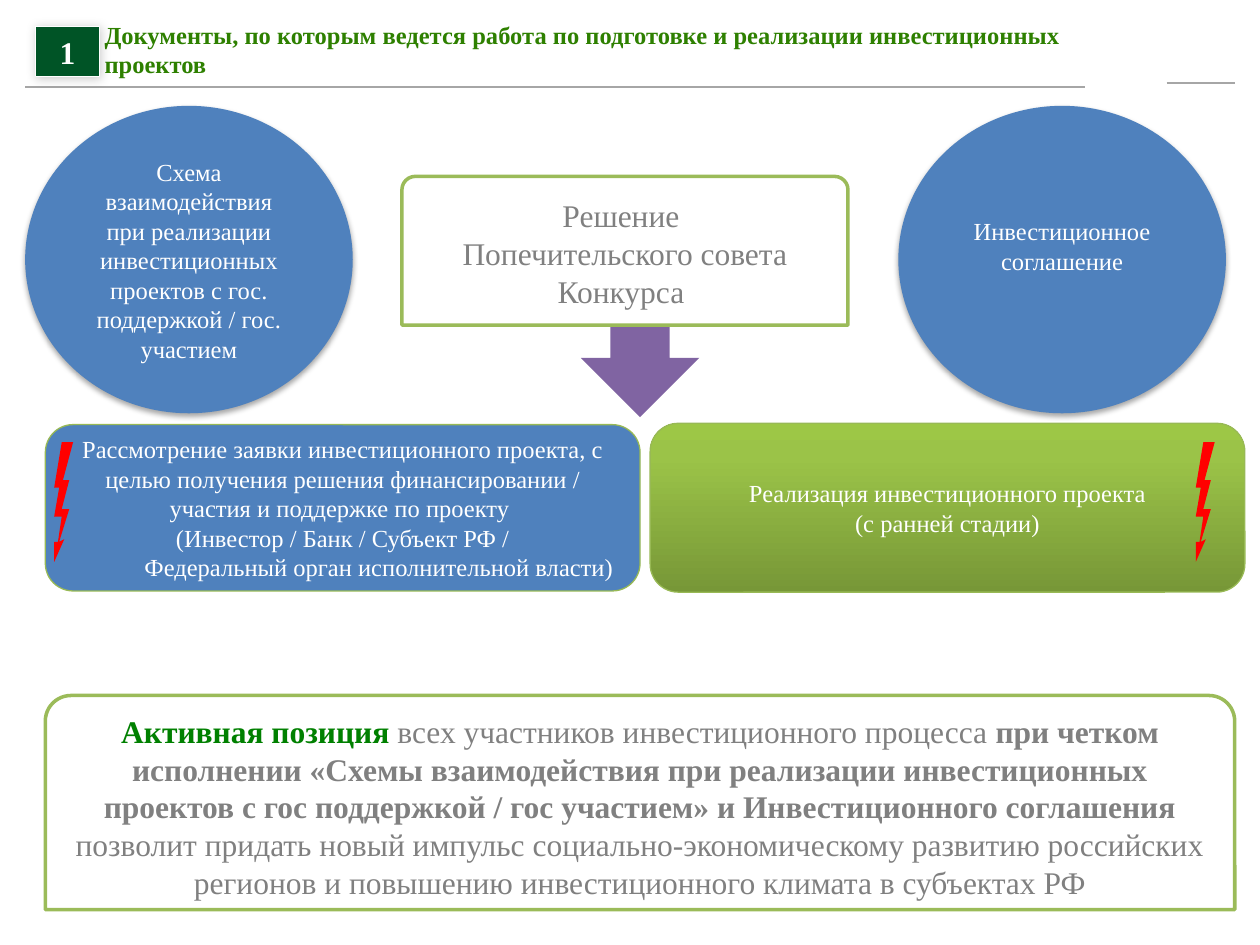
from dataclasses import dataclass
from copy import deepcopy

from lxml import etree
from pptx import Presentation
from pptx.dml.color import RGBColor
from pptx.enum.shapes import MSO_CONNECTOR, MSO_SHAPE
from pptx.enum.text import MSO_ANCHOR, PP_ALIGN
from pptx.oxml.ns import qn
from pptx.util import Inches, Pt

RECTANGLE, OVAL = MSO_SHAPE.RECTANGLE, MSO_SHAPE.OVAL
ROUNDED, TOP_ROUNDED = MSO_SHAPE.ROUNDED_RECTANGLE, MSO_SHAPE.ROUND_2_SAME_RECTANGLE
DOWN_ARROW = MSO_SHAPE.DOWN_ARROW
TOP, MIDDLE = MSO_ANCHOR.TOP, MSO_ANCHOR.MIDDLE
LEFT, CENTER, RIGHT = PP_ALIGN.LEFT, PP_ALIGN.CENTER, PP_ALIGN.RIGHT
STRAIGHT = MSO_CONNECTOR.STRAIGHT


@dataclass(frozen=True)
class Theme:
    font: str = "Times New Roman"
    small: int = 14
    large: int = 18
    white: str = "FFFFFF"
    grey: str = "808080"
    rule: str = "A6A6A6"
    title: str = "2E8000"
    accent: str = "008000"
    badge: str = "005426"
    blue: str = "4F81BD"
    purple: str = "8064A2"
    red: str = "FF0000"
    frame: str = "9BBB59"
    edge: str = "98B955"
    gradient: tuple = ((0, "779737"), (0.8, "9BC348"), (1, "9DC746"))


def color(value):
    return RGBColor.from_string(value)


class SlideBuilder:
    def __init__(self, slide, theme):
        self.slide = slide
        self.theme = theme

    def rule(self, left, right, y):
        line = self.slide.shapes.add_connector(
            STRAIGHT, Inches(left), Inches(y), Inches(right), Inches(y))
        line.line.color.rgb = color(self.theme.rule)
        line.line.width = Pt(1)
        etree.SubElement(line._element.spPr, qn("a:effectLst"))

    def shape(self, kind, place, fill=None, line=None, width=0.75, adjustment=None):
        box = self.slide.shapes.add_shape(kind, *map(Inches, place))
        if adjustment is not None:
            box.adjustments[0] = adjustment
        self.paint(box, fill, line, width)
        return box

    def paint(self, box, fill, line=None, width=0.75):
        box.shadow.inherit = False
        if fill:
            box.fill.solid()
            box.fill.fore_color.rgb = color(fill)
        if line:
            box.line.color.rgb = color(line)
            box.line.width = Pt(width)
        else:
            box.line.fill.background()

    def gradient(self, box):
        """Fill the box with the theme's stops, running from bottom to top."""
        box.fill.gradient()
        box.fill.gradient_angle = 90
        stop_list = box._element.spPr.find(".//" + qn("a:gsLst"))
        stop_list.append(deepcopy(stop_list[0]))
        for stop, (position, value) in zip(box.fill.gradient_stops, self.theme.gradient):
            stop.position = position
            stop.color.rgb = color(value)

    def shadow(self, box, opacity, blur, distance, angle):
        effects = box._element.spPr.find(qn("a:effectLst"))
        outer = etree.SubElement(
            effects, qn("a:outerShdw"), blurRad=str(Pt(blur)), dist=str(Pt(distance)),
            dir=str(angle * 60000), rotWithShape="0")
        shade = etree.SubElement(outer, qn("a:srgbClr"), val="000000")
        etree.SubElement(shade, qn("a:alpha"), val=str(opacity * 1000))

    def text(self, box, paragraphs, size, anchor=MIDDLE):
        """Each paragraph is (alignment, [(text, colour, bold), ...])."""
        frame = box.text_frame
        frame.word_wrap = True
        frame.vertical_anchor = anchor
        for index, (alignment, runs) in enumerate(paragraphs):
            para = frame.add_paragraph() if index else frame.paragraphs[0]
            para.alignment = alignment
            for content, value, bold in runs:
                span = para.add_run()
                span.text = content
                span.font.name = self.theme.font
                span.font.size = Pt(size)
                span.font.bold = bold
                span.font.color.rgb = color(value)

    def title(self, place, content):
        box = self.slide.shapes.add_textbox(*map(Inches, place))
        frame = box.text_frame
        frame.margin_left = frame.margin_right = frame.margin_top = frame.margin_bottom = 0
        self.text(box, [(LEFT, [(content, self.theme.title, True)])], self.theme.small)

    def circle(self, left, content, top_margin=0.05):
        box = self.shape(OVAL, (left, 0.84, 2.6, 2.44), self.theme.blue)
        self.shadow(box, 35, 3.1, 1.8, 90)
        box.text_frame.margin_top = Inches(top_margin)
        self.text(box, [(CENTER, [(content, self.theme.white, False)])],
                  self.theme.small, TOP)

    def bolt(self, left, top):
        """Draw a lightning bolt; its outline is in hundredths of an inch."""
        outline = ((6, 0), (0, 36), (4, 36), (0, 59), (6, 59), (3, 79), (0, 79), (0, 95),
                   (8, 77), (4, 79), (12, 53), (6, 53), (12, 30), (7, 30), (15, 0))
        builder = self.slide.shapes.build_freeform(*outline[0], scale=Inches(0.01))
        builder.add_line_segments(outline[1:], close=True)
        self.paint(builder.convert_to_shape(Inches(left), Inches(top)), self.theme.red)


def main():
    theme = Theme()
    deck = Presentation()
    deck.slide_width, deck.slide_height = Inches(10), Inches(7.5)
    page = SlideBuilder(deck.slides.add_slide(deck.slide_layouts[6]), theme)

    page.rule(0.2, 8.61, 0.69)
    page.rule(9.26, 9.8, 0.66)
    page.title((0.83, 0.11, 7.66, 0.56),
               "Документы, по которым ведется работа по подготовке и реализации "
               "инвестиционных проектов")
    badge = page.shape(RECTANGLE, (0.28, 0.21, 0.51, 0.4), theme.badge, theme.white)
    page.shadow(badge, 20, 6, 1, 45)
    page.text(badge, [(CENTER, [("1", theme.white, True)])], theme.large, TOP)

    page.shape(DOWN_ARROW, (4.61, 2.37, 0.94, 0.94), theme.purple)

    review = page.shape(ROUNDED, (0.36, 3.37, 4.72, 1.32), theme.blue, theme.edge)
    page.text(review, [
        (CENTER, [("Рассмотрение заявки инвестиционного проекта, с целью получения решения "
                   "финансировании / участия и поддержке по проекту ", theme.white, False)]),
        (CENTER, [("(Инвестор / Банк / Субъект РФ /", theme.white, False)]),
        (RIGHT, [("Федеральный орган исполнительной власти) ", theme.white, False)]),
    ], theme.small)

    delivery = page.shape(ROUNDED, (5.16, 3.36, 4.72, 1.34), line=theme.edge)
    page.gradient(delivery)
    page.text(delivery, [
        (CENTER, [("Реализация инвестиционного проекта", theme.white, False)]),
        (CENTER, [("(с ранней стадии)", theme.white, False)]),
    ], theme.small)

    decision = page.shape(TOP_ROUNDED, (3.19, 1.4, 3.54, 1.18), theme.white,
                          theme.frame, 2, 0.09)
    page.text(decision, [
        (CENTER, [("Решение ", theme.grey, False)]),
        (CENTER, [("Попечительского совета Конкурса ", theme.grey, False)]),
    ], theme.large)

    conclusion = page.shape(TOP_ROUNDED, (0.36, 5.52, 9.44, 1.7), theme.white,
                            theme.frame, 2, 0.12)
    page.text(conclusion, [(CENTER, [
        ("Активная позиция ", theme.accent, True),
        ("всех участников инвестиционного процесса ", theme.grey, False),
        ("при четком исполнении «Схемы взаимодействия при реализации инвестиционных "
         "проектов с гос поддержкой / гос участием» и Инвестиционного соглашения ",
         theme.grey, True),
        ("позволит придать новый импульс социально-экономическому развитию российских "
         "регионов и повышению инвестиционного климата в субъектах РФ", theme.grey, False),
    ])], theme.large)

    for left in (0.43, 9.49):
        page.bolt(left, 3.51)

    page.circle(0.2, "Схема взаимодействия при реализации инвестиционных проектов "
                     "с гос. поддержкой / гос. участием")
    page.circle(7.13, "Инвестиционное соглашение", top_margin=0.52)

    deck.save("out.pptx")


if __name__ == "__main__":
    main()
